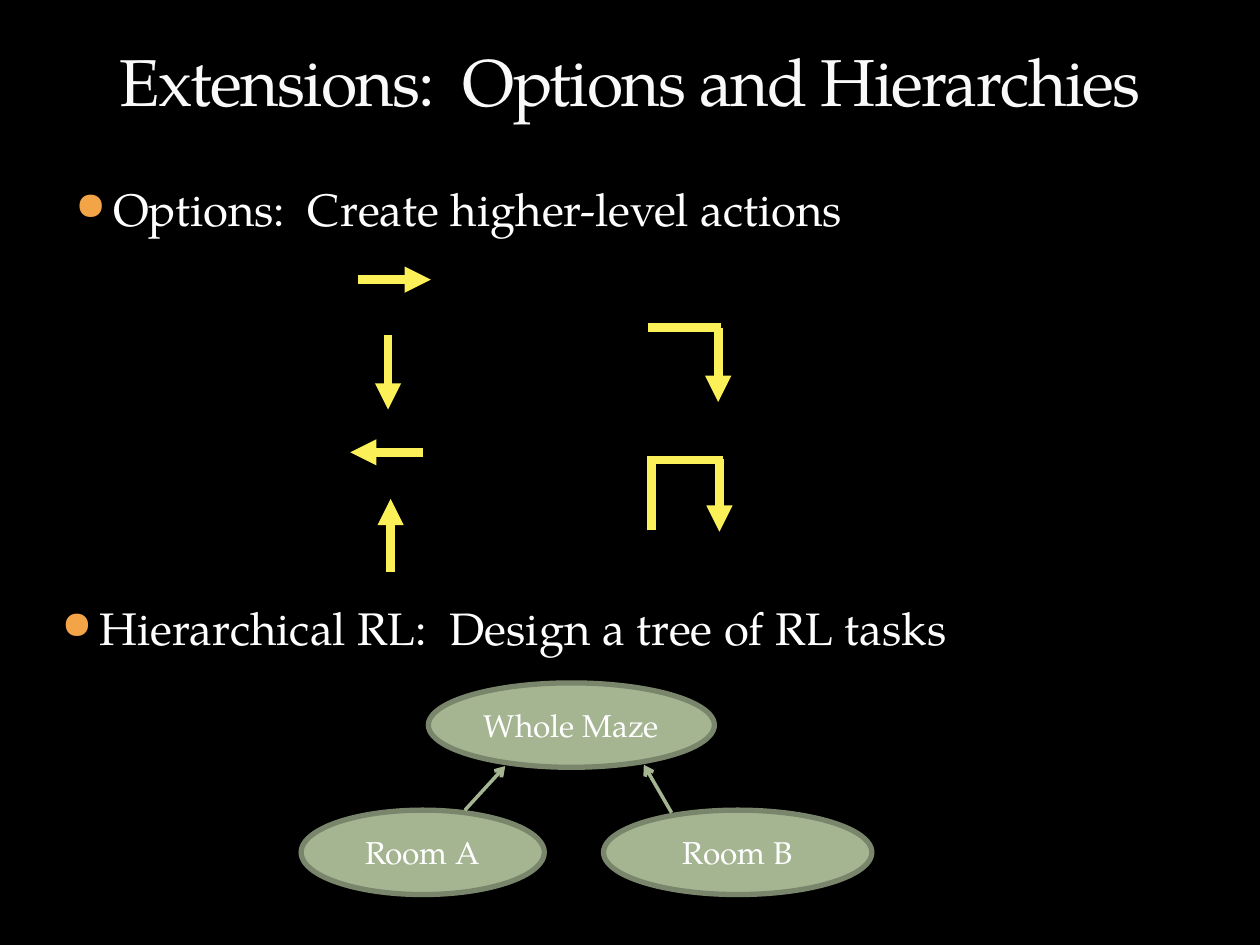
from lxml.etree import SubElement
from pptx import Presentation
from pptx.dml.color import RGBColor
from pptx.enum.shapes import MSO_CONNECTOR, MSO_SHAPE
from pptx.enum.text import MSO_ANCHOR, PP_ALIGN
from pptx.oxml.ns import qn
from pptx.util import Inches, Pt

FONT = "TeX Gyre Pagella"
BLACK = RGBColor(0x00, 0x00, 0x00)
WHITE = RGBColor(0xFF, 0xFF, 0xFF)
TITLE_WHITE = RGBColor(0xF9, 0xF9, 0xF9)
ORANGE = RGBColor(0xF3, 0xA4, 0x47)
YELLOW = RGBColor(0xFC, 0xF0, 0x59)
SAGE = RGBColor(0xA5, 0xB5, 0x92)
DARK_SAGE = RGBColor(0x7A, 0x86, 0x6C)

# Content: positions in inches
TITLE = ("Extensions:  Options and Hierarchies", (0.5, 0.17, 9, 0.83))
BULLETS = [
    ("Options:  Create higher-level actions", (0.5, 1.39, 9, 0.64)),
    ("Hierarchical RL:  Design a tree of RL tasks", (0.39, 4.71, 9, 0.58)),
]
# Action strokes: start, end, arrowhead
BASIC_ACTIONS = [
    ((2.84, 2.22), (3.42, 2.22), "triangle"),
    ((3.08, 2.66), (3.08, 3.25), "triangle"),
    ((3.36, 3.59), (2.78, 3.59), "triangle"),
    ((3.1, 4.54), (3.1, 3.96), "triangle"),
]
COMBINED_ACTIONS = [
    ((5.14, 2.6), (5.72, 2.6), None),
    ((5.7, 2.6), (5.7, 3.19), "triangle"),
    ((5.17, 4.21), (5.17, 3.62), None),
    ((5.15, 3.65), (5.74, 3.65), None),
    ((5.71, 3.64), (5.71, 4.22), "triangle"),
]
# Task tree: label, left, top, width
TASKS = [
    ("Room A", 2.39, 6.43, 1.93),
    ("Room B", 4.79, 6.43, 2.13),
    ("Whole Maze", 3.4, 5.42, 2.27),
]
TASK_HEIGHT = 0.67
TASK_LINKS = [
    ((5.33, 6.45), (5.11, 6.07), "arrow"),
    ((3.69, 6.43), (4.01, 6.08), "arrow"),
]


def set_font(paragraph, size, color):
    font = paragraph.font
    font.name, font.size, font.color.rgb = FONT, Pt(size), color


def add_text(slide, text, box):
    frame = slide.shapes.add_textbox(*map(Inches, box)).text_frame
    frame.word_wrap = True
    paragraph = frame.paragraphs[0]
    paragraph.text = text
    return frame, paragraph


def add_title(slide, text, box):
    frame, paragraph = add_text(slide, text, box)
    frame.vertical_anchor = MSO_ANCHOR.BOTTOM
    paragraph.alignment = PP_ALIGN.CENTER
    set_font(paragraph, 37.8, TITLE_WHITE)
    paragraph.runs[0].font._element.set("spc", "-100")


def add_bullet(slide, text, box):
    _, paragraph = add_text(slide, text, box)
    properties = paragraph._p.get_or_add_pPr()
    properties.set("marL", str(Inches(0.3)))
    properties.set("indent", str(-Inches(0.3)))
    color = SubElement(properties, qn("a:buClr"))
    SubElement(color, qn("a:srgbClr"), val=str(ORANGE))
    SubElement(properties, qn("a:buSzPct"), val="85000")
    SubElement(properties, qn("a:buChar"), char="●")
    set_font(paragraph, 26, WHITE)


def add_line(slide, start, end, head, color, width):
    connector = slide.shapes.add_connector(
        MSO_CONNECTOR.STRAIGHT, *map(Inches, start + end))
    connector.line.color.rgb = color
    connector.line.width = Pt(width)
    if head:
        SubElement(connector.line._get_or_add_ln(), qn("a:tailEnd"), type=head)
    SubElement(connector._element.spPr, qn("a:effectLst"))


def add_task(slide, label, left, top, width):
    shape = slide.shapes.add_shape(
        MSO_SHAPE.OVAL, *map(Inches, (left, top, width, TASK_HEIGHT)))
    shape.shadow.inherit = False
    shape.fill.solid()
    shape.fill.fore_color.rgb = SAGE
    shape.line.color.rgb = DARK_SAGE
    shape.line.width = Pt(3)
    frame = shape.text_frame
    frame.vertical_anchor = MSO_ANCHOR.MIDDLE
    paragraph = frame.paragraphs[0]
    paragraph.text = label
    paragraph.alignment = PP_ALIGN.CENTER
    set_font(paragraph, 18, WHITE)


def main():
    presentation = Presentation()
    presentation.slide_width, presentation.slide_height = Inches(10), Inches(7.5)
    slide = presentation.slides.add_slide(presentation.slide_layouts[6])
    slide.background.fill.solid()
    slide.background.fill.fore_color.rgb = BLACK

    # Title and bullets
    add_title(slide, *TITLE)
    for bullet in BULLETS:
        add_bullet(slide, *bullet)

    # Basic actions on the left, combined ones on the right
    for stroke in BASIC_ACTIONS + COMBINED_ACTIONS:
        add_line(slide, *stroke, YELLOW, 5)

    # Task tree
    for task in TASKS:
        add_task(slide, *task)
    for link in TASK_LINKS:
        add_line(slide, *link, SAGE, 2)

    presentation.save("out.pptx")


if __name__ == "__main__":
    main()
